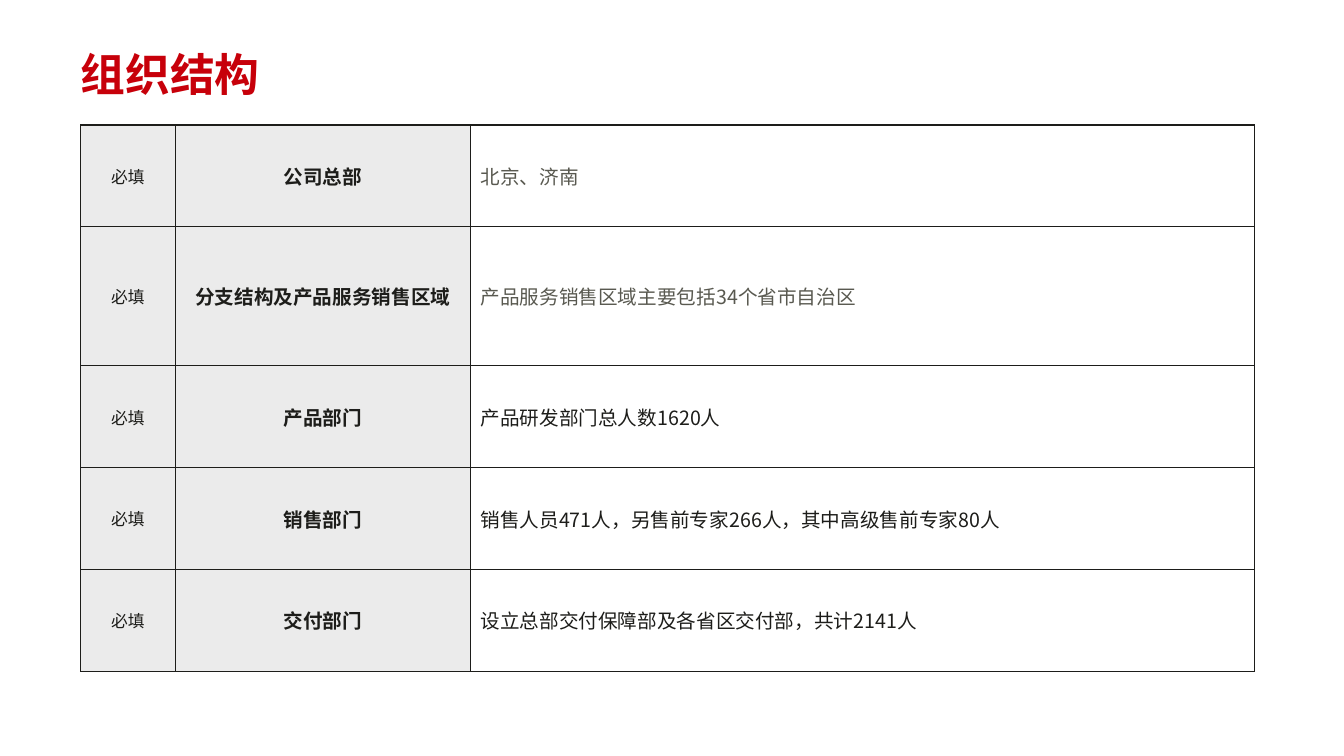
import pptx
import pptx.util
import pptx.dml.color
import pptx.enum.text
import pptx.oxml.ns
from lxml import etree

RGB = pptx.dml.color.RGBColor
RED = RGB(0xC7, 0x00, 0x0A)
INK = RGB(0x1D, 0x1D, 0x1A)
GREY = RGB(0x59, 0x59, 0x50)
PALE = RGB(0xEB, 0xEB, 0xEB)
WHITE = RGB(0xFF, 0xFF, 0xFF)
FONT = "Noto Sans CJK SC"
SCALE = 9144
ALIGN = pptx.enum.text.PP_ALIGN
ANCHOR = pptx.enum.text.MSO_ANCHOR

WIDTHS = [94, 293, 778]
ROWS = [
    (101, "公司总部", "北京、济南", GREY),
    (138, "分支结构及产品服务销售区域", "产品服务销售区域主要包括34个省市自治区", GREY),
    (101, "产品部门", "产品研发部门总人数1620人", INK),
    (101, "销售部门", "销售人员471人，另售前专家266人，其中高级售前专家80人", INK),
    (101, "交付部门", "设立总部交付保障部及各省区交付部，共计2141人", INK),
]


def px(count):
    return pptx.util.Emu(count * SCALE)


def write(frame, text, size, color, bold=False, align=ALIGN.LEFT):
    frame.text = text
    para = frame.paragraphs[0]
    para.alignment = align
    for run in para.runs:
        font = run.font
        font.size = pptx.util.Pt(size)
        font.bold = bold
        font.color.rgb = color
        font.name = FONT
        east = etree.SubElement(font._element, pptx.oxml.ns.qn("a:ea"))
        east.set("typeface", FONT)
    return para


def add_title(slide, text):
    title = slide.shapes.title
    title.left, title.top, title.width, title.height = map(px, (80, 52, 1175, 109))
    frame = title.text_frame
    frame.margin_left = frame.margin_right = 0
    frame.margin_top = frame.margin_bottom = 0
    frame.vertical_anchor = ANCHOR.TOP
    frame.auto_size = pptx.enum.text.MSO_AUTO_SIZE.NONE
    para = write(frame, text, 32, RED, True)
    para.line_spacing = pptx.util.Pt(34.3)


def add_edges(cell):
    props = cell._tc.get_or_add_tcPr()
    for index, side in enumerate(("lnL", "lnR", "lnT", "lnB")):
        line = etree.Element(pptx.oxml.ns.qn("a:" + side), w=str(pptx.util.Pt(1)))
        fill = etree.SubElement(line, pptx.oxml.ns.qn("a:solidFill"))
        etree.SubElement(fill, pptx.oxml.ns.qn("a:srgbClr"), val=str(INK))
        props.insert(index, line)


def fill_cell(cell, back, text, *style):
    cell.fill.solid()
    cell.fill.fore_color.rgb = back
    cell.vertical_anchor = ANCHOR.MIDDLE
    write(cell.text_frame, text, *style)
    add_edges(cell)


def add_grid(slide):
    high = sum(row[0] for row in ROWS)
    frame = slide.shapes.add_table(
        len(ROWS), len(WIDTHS), px(80), px(124), px(sum(WIDTHS)), px(high))
    table = frame.table
    table.first_row = table.horz_banding = False
    for column, width in zip(table.columns, WIDTHS):
        column.width = px(width)
    for row, (height, label, detail, color) in zip(table.rows, ROWS):
        row.height = px(height)
        must, name, value = row.cells
        fill_cell(must, PALE, "必填", 12, INK, False, ALIGN.CENTER)
        fill_cell(name, PALE, label, 14, INK, True, ALIGN.CENTER)
        fill_cell(value, WHITE, detail, 14, color)


def main():
    deck = pptx.Presentation()
    deck.slide_width, deck.slide_height = px(1334), px(750)
    slide = deck.slides.add_slide(deck.slide_layouts[5])
    add_title(slide, "组织结构")
    add_grid(slide)
    deck.save("out.pptx")


if __name__ == "__main__":
    main()
